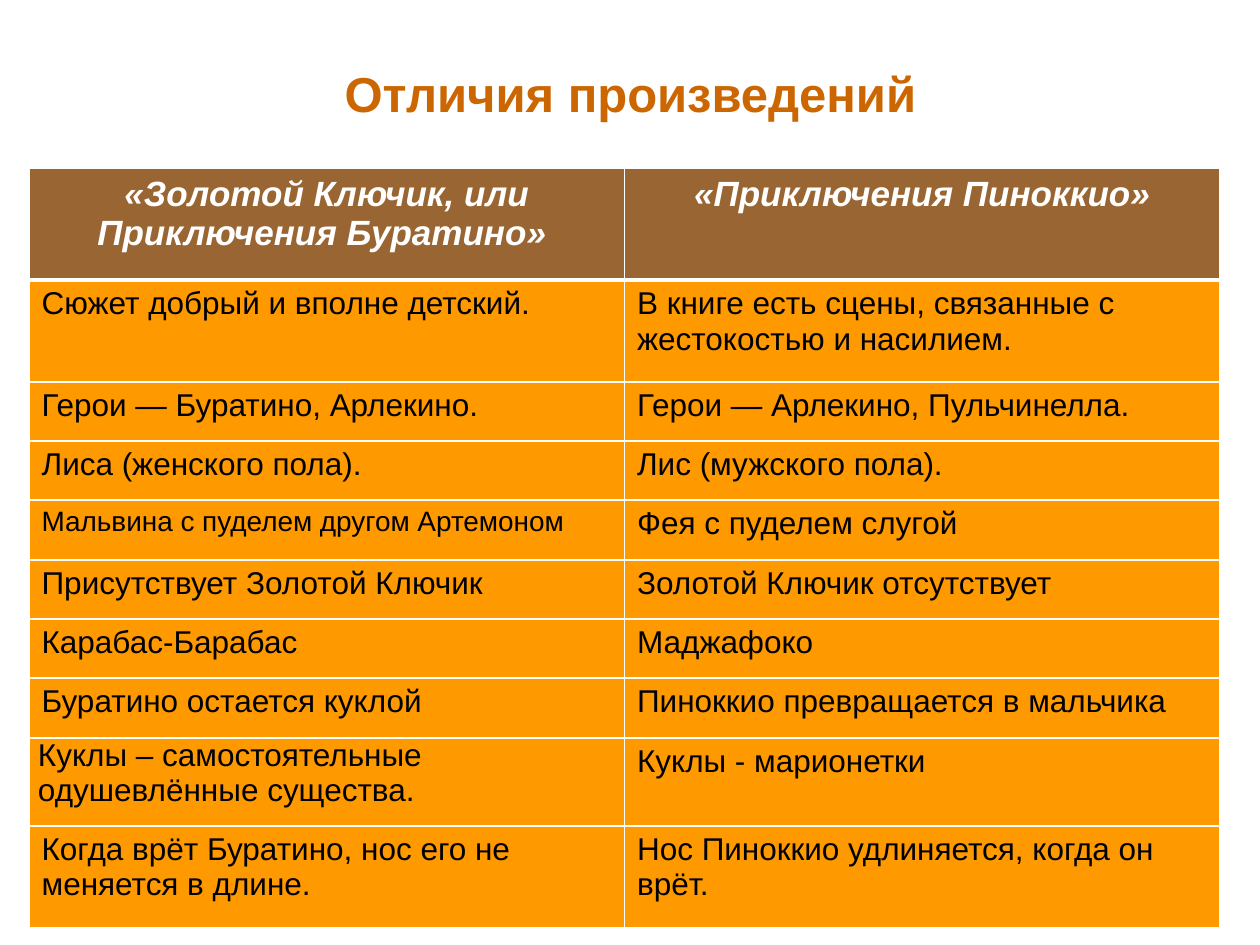
from dataclasses import dataclass

from lxml import etree
from pptx import Presentation
from pptx import util as u
from pptx.dml.color import RGBColor
from pptx.enum import text
from pptx.oxml.ns import qn

PX = u.Inches(1) / 126


@dataclass(frozen=True)
class Theme:
    font: str = "Arial"
    title: str = "CC6600"
    header_fill: str = "996633"
    header_text: str = "FFFFFF"
    body_fill: str = "FF9900"
    body_text: str = "000000"
    border: str = "FFFFFF"
    title_size: int = 28
    header_size: int = 20
    body_size: int = 18
    small_size: int = 16
    thin: int = 1
    thick: int = 3


THEME = Theme()

TITLE = "Отличия произведений"
HEADER = ("«Золотой Ключик, или Приключения Буратино» ", "«Приключения Пиноккио»")
DIFFERENCES = [
    ("Сюжет добрый и вполне детский.",
     "В книге есть сцены, связанные с жестокостью и насилием."),
    ("Герои — Буратино, Арлекино.", "Герои — Арлекино, Пульчинелла."),
    ("Лиса (женского пола).", "Лис (мужского пола)."),
    ("Мальвина с пуделем другом Артемоном", "Фея с пуделем слугой"),
    ("Присутствует Золотой Ключик", "Золотой Ключик отсутствует"),
    ("Карабас-Барабас ", "Маджафоко"),
    ("Буратино остается куклой", "Пиноккио превращается в мальчика"),
    ("Куклы – самостоятельные одушевлённые существа.", "Куклы - марионетки"),
    ("Когда врёт Буратино, нос его не меняется в длине.",
     "Нос Пиноккио удлиняется, когда он врёт."),
]
ROW_HEIGHTS = [112, 102, 59, 59, 60, 59, 59, 60, 88, 102]
SMALL_CELL = (4, 0)
TIGHT_CELL = (8, 0)


def px(length):
    return u.Emu(round(length * PX))


def set_all(target, values):
    for name, value in values.items():
        setattr(target, name, value)


def write(frame, words, color, size, align, bold=False, italic=False):
    frame.text = words
    para = frame.paragraphs[0]
    para.alignment = align
    font = para.runs[0].font
    set_all(font, {"name": THEME.font, "size": u.Pt(size),
                   "bold": bold, "italic": italic})
    font.color.rgb = RGBColor.from_string(color)


def set_borders(cell, widths):
    """Draw cell sides; widths maps L, R, T, B to points, in that order."""
    props = cell._tc.get_or_add_tcPr()
    for index, (side, width) in enumerate(widths.items()):
        line = etree.Element(qn(f"a:ln{side}"), w=str(u.Pt(width)))
        fill = etree.SubElement(line, qn("a:solidFill"))
        etree.SubElement(fill, qn("a:srgbClr"), val=THEME.border)
        props.insert(index, line)


def add_title(slide, left, top, width, height):
    title = slide.shapes.title
    set_all(title, {"left": px(left), "top": px(top),
                    "width": px(width), "height": px(height)})
    set_all(title.text_frame, {"word_wrap": True,
                               "vertical_anchor": text.MSO_ANCHOR.MIDDLE})
    write(title.text_frame, TITLE, THEME.title, THEME.title_size,
          text.PP_ALIGN.CENTER, bold=True)


def format_cell(cell, row, column, words):
    is_header = row == 0
    cell.fill.solid()
    cell.fill.fore_color.rgb = RGBColor.from_string(
        THEME.header_fill if is_header else THEME.body_fill)
    if is_header:
        write(cell.text_frame, words, THEME.header_text, THEME.header_size,
              text.PP_ALIGN.CENTER, bold=True, italic=True)
    else:
        size = THEME.small_size if (row, column) == SMALL_CELL else THEME.body_size
        write(cell.text_frame, words, THEME.body_text, size, text.PP_ALIGN.LEFT)
    if (row, column) == TIGHT_CELL:
        set_all(cell, {"margin_left": px(9), "margin_right": px(9),
                       "margin_top": 0, "margin_bottom": 0})
    set_borders(cell, {"L": THEME.thin, "R": THEME.thin,
                       "T": THEME.thick if row == 1 else THEME.thin,
                       "B": THEME.thick if is_header else THEME.thin})


def add_comparison(slide, left, top, width):
    rows = [HEADER, *DIFFERENCES]
    table = slide.shapes.add_table(
        len(rows), len(HEADER), px(left), px(top),
        px(width), px(sum(ROW_HEIGHTS))).table
    table.horz_banding = False
    for column in table.columns:
        column.width = px(width / len(HEADER))
    for row, (height, entries) in enumerate(zip(ROW_HEIGHTS, rows)):
        table.rows[row].height = px(height)
        for column, words in enumerate(entries):
            format_cell(table.cell(row, column), row, column, words)


def main():
    deck = Presentation()
    set_all(deck, {"slide_width": px(1260), "slide_height": px(945)})
    slide = deck.slides.add_slide(deck.slide_layouts.get_by_name("Title Only"))
    add_title(slide, 95, 49, 1071, 88)
    add_comparison(slide, 29, 168, 1191)
    deck.save("out.pptx")


if __name__ == "__main__":
    main()
